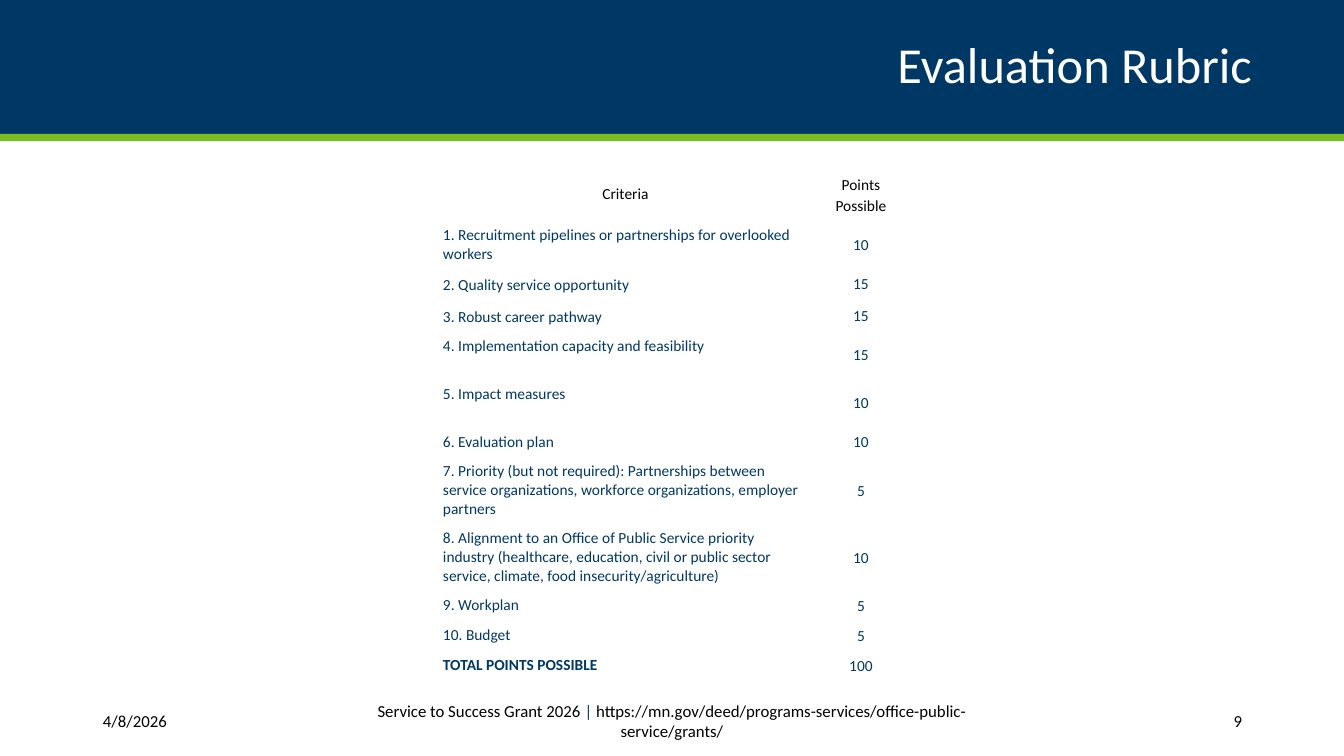
from pptx import Presentation
from pptx.dml.color import RGBColor
from pptx.enum.shapes import MSO_SHAPE
from pptx.enum.text import MSO_ANCHOR, PP_ALIGN
from pptx.util import Pt

RECTANGLE = MSO_SHAPE.RECTANGLE
TOP, MIDDLE = MSO_ANCHOR.TOP, MSO_ANCHOR.MIDDLE
LEFT, CENTER, RIGHT = PP_ALIGN.LEFT, PP_ALIGN.CENTER, PP_ALIGN.RIGHT

NAVY = RGBColor(0x00, 0x38, 0x65)
GREEN = RGBColor(0x78, 0xBE, 0x21)
WHITE = RGBColor(0xFF, 0xFF, 0xFF)
BLACK = RGBColor(0x00, 0x00, 0x00)

FONT = "Calibri"
EMU_PER_INCH = 914400
PX_PER_INCH = 100.8
TIGHT, LOOSE = 13.5, 15.2

RUBRIC = [
    ("1. Recruitment pipelines or partnerships for overlooked workers", 10, 48, TIGHT),
    ("2. Quality service opportunity", 15, 31, LOOSE),
    ("3. Robust career pathway", 15, 31, LOOSE),
    ("4. Implementation capacity and feasibility", 15, 48, TIGHT),
    ("5. Impact measures", 10, 48, TIGHT),
    ("6. Evaluation plan", 10, 30, TIGHT),
    ("7. Priority (but not required): Partnerships between service organizations, "
     "workforce organizations, employer partners", 5, 67, TIGHT),
    ("8. Alignment to an Office of Public Service priority industry (healthcare, "
     "education, civil or public sector service, climate, food insecurity/agriculture)",
     10, 67, TIGHT),
    ("9. Workplan", 5, 30, TIGHT),
    ("10. Budget", 5, 30, TIGHT),
]


def px(length):
    return round(length * EMU_PER_INCH / PX_PER_INCH)


def style_paragraph(paragraph, size, color, align, bold=False):
    paragraph.alignment = align
    paragraph.font.name = FONT
    paragraph.font.size = Pt(size)
    paragraph.font.color.rgb = color
    paragraph.font.bold = bold


def add_band(page, top, height, color):
    band = page.shapes.add_shape(RECTANGLE, 0, px(top), px(1344), px(height))
    band.shadow.inherit = False
    band.fill.solid()
    band.fill.fore_color.rgb = color
    band.line.fill.background()


def add_text(page, left, top, width, height, spans, size, color, align):
    box = page.shapes.add_textbox(px(left), px(top), px(width), px(height))
    frame = box.text_frame
    frame.word_wrap = True
    frame.vertical_anchor = MIDDLE
    paragraph = frame.paragraphs[0]
    style_paragraph(paragraph, size, color, align)
    for text in spans:
        paragraph.add_run().text = text
    return frame


def fill_cell(cell, text, color, align, anchor, spacing, bold=False):
    cell.fill.background()
    cell.vertical_anchor = anchor
    cell.margin_left = cell.margin_right = px(6)
    cell.margin_top = cell.margin_bottom = px(5)
    paragraph = cell.text_frame.paragraphs[0]
    paragraph.text = text
    paragraph.line_spacing = Pt(spacing)
    style_paragraph(paragraph, 11, color, align, bold)


def add_rubric(page):
    total = sum(points for _, points, _, _ in RUBRIC)
    entries = RUBRIC + [("TOTAL POINTS POSSIBLE", total, 30, TIGHT)]
    heights = [53] + [height for _, _, height, _ in entries]
    frame = page.shapes.add_table(
        len(heights), 2, px(437), px(168), px(471), px(sum(heights)))
    table = frame.table
    table.first_row = False
    table.horz_banding = False
    for column, width in zip(table.columns, (377, 94)):
        column.width = px(width)
    for row, height in zip(table.rows, heights):
        row.height = px(height)

    fill_cell(table.cell(0, 0), "Criteria", BLACK, CENTER, MIDDLE, TIGHT)
    fill_cell(table.cell(0, 1), "Points Possible", BLACK, CENTER, MIDDLE, LOOSE)
    for index, (criterion, points, _, spacing) in enumerate(entries, start=1):
        is_total = index == len(entries)
        fill_cell(table.cell(index, 0), criterion, NAVY, LEFT, TOP, spacing, is_total)
        fill_cell(table.cell(index, 1), str(points), NAVY, CENTER, MIDDLE, TIGHT)


def main():
    deck = Presentation()
    deck.slide_width, deck.slide_height = px(1344), px(756)
    page = deck.slides.add_slide(deck.slide_layouts[6])

    add_band(page, 0, 134, NAVY)
    add_band(page, 134, 7, GREEN)

    title = add_text(page, 93, 0, 1159, 134, ["Evaluation Rubric"], 36, WHITE, RIGHT)
    title.margin_left = title.margin_right = 0
    title.margin_top = title.margin_bottom = px(20)
    title.paragraphs[0].line_spacing = 0.9

    add_text(page, 93, 701, 150, 40, ["4/8/2026"], 12, BLACK, LEFT)
    footer = add_text(
        page, 364, 701, 616, 40,
        ["Service to Success Grant 2026 ", "|",
         " https://mn.gov/deed/programs-services/office-public-service/grants/"],
        12, BLACK, CENTER)
    footer.paragraphs[0].runs[1].font.color.rgb = NAVY
    add_text(page, 1091, 701, 161, 40, ["9"], 12, BLACK, RIGHT)

    add_rubric(page)
    deck.save("out.pptx")


if __name__ == "__main__":
    main()
